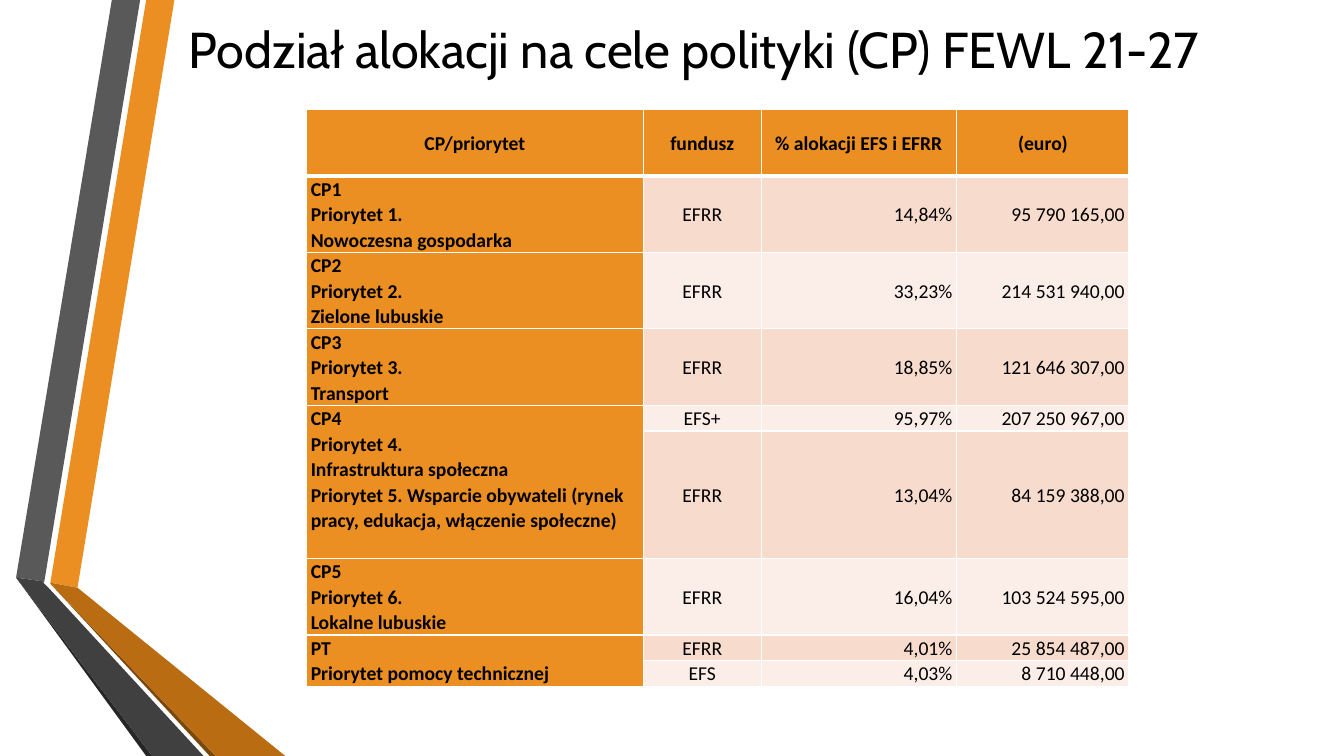
"""Builds the slide on the split of FEWL 21-27 funds by policy goal."""
from dataclasses import dataclass
from typing import Any

from lxml import etree
from pptx import Presentation
from pptx.dml import color
from pptx.enum import text as t
from pptx.oxml import ns
from pptx.util import Pt


@dataclass(frozen=True)
class Theme:
    """Colours, fonts and type sizes."""
    white: str = "FFFFFF"
    ink: str = "000000"
    main: str = "EB8F22"
    ochre: str = "B96C11"
    brown: str = "7B480B"
    grey: str = "595959"
    coal: str = "404040"
    dark: str = "262626"
    bands: tuple[str, str] = ("FBEEE8", "F7DBCD")
    head: str = "Cabin"
    body: str = "Calibri"
    big: float = 36
    small: float = 14


@dataclass(frozen=True)
class Strip:
    """A flat polygon of the side ribbon."""
    fill: str
    dots: tuple[tuple[float, float], ...]


@dataclass(frozen=True)
class Row:
    """A table row; an empty goal joins the cell above."""
    high: float
    goal: str
    fund: str
    share: str
    euro: str


LOOK = Theme()
LEFT, MID, RIGHT = t.PP_ALIGN.LEFT, t.PP_ALIGN.CENTER, t.PP_ALIGN.RIGHT
WIDE, HIGH = 960, 540
COLS = (240.5, 84.2, 139.7, 123.1)
ALIGN = (LEFT, MID, RIGHT, RIGHT)
LINE, TRIO = 18.2, 54.7

STRIPS = (
    Strip(LOOK.main, ((36, 416.2), (55.4, 419.8), (124.6, 0), (104.4, 0))),
    Strip(LOOK.grey, ((100.1, 0), (79.9, 0), (11.5, 412.6), (31.7, 415.4))),
    Strip(LOOK.dark, ((11.5, 412.6), (104.4, HIGH), (108.7, HIGH))),
    Strip(LOOK.brown, ((36, 416.9), (149.8, HIGH), (154.1, HIGH))),
    Strip(LOOK.ochre, ((36, 416.9), (154.1, HIGH), (203.8, HIGH),
                       (55.4, 419.8), (36, 416.2))),
    Strip(LOOK.coal, ((145.4, HIGH), (34.6, 419.8), (31, 416.2),
                      (31.7, 415.4), (11.5, 412.6), (108.7, HIGH))),
)

ROWS = (
    Row(47, "CP/priorytet", "fundusz", "% alokacji EFS i EFRR", "(euro)"),
    Row(TRIO, "CP1\nPriorytet 1.\nNowoczesna gospodarka",
        "EFRR", "14,84%", "95 790 165,00"),
    Row(TRIO, "CP2\nPriorytet 2.\nZielone lubuskie",
        "EFRR", "33,23%", "214 531 940,00"),
    Row(TRIO, "CP3\nPriorytet 3.\nTransport",
        "EFRR", "18,85%", "121 646 307,00"),
    Row(LINE, "CP4\nPriorytet 4.\nInfrastruktura społeczna\nPriorytet 5. "
        "Wsparcie obywateli (rynek pracy, edukacja, włączenie społeczne)",
        "EFS+", "95,97%", "207 250 967,00"),
    Row(5 * LINE, "", "EFRR", "13,04%", "84 159 388,00"),
    Row(TRIO, "CP5\nPriorytet 6.\nLokalne lubuskie",
        "EFRR", "16,04%", "103 524 595,00"),
    Row(LINE, "PT\nPriorytet pomocy technicznej",
        "EFRR", "4,01%", "25 854 487,00"),
    Row(LINE, "", "EFS", "4,03%", "8 710 448,00"),
)


def put(item: Any, vals: dict[str, Any]) -> None:
    """Set each named attribute of an item."""
    for name, val in vals.items():
        setattr(item, name, val)


def paint(fill: Any, tone: str) -> None:
    """Give a fill one solid colour."""
    fill.solid()
    fill.fore_color.rgb = color.RGBColor.from_string(tone)


def style(para: Any, side: Any, face: str, size: float, bold: bool) -> None:
    """Format a paragraph and its runs."""
    para.alignment = side
    for run in para.runs:
        put(run.font, {"name": face, "size": Pt(size), "bold": bold})
        run.font.color.rgb = color.RGBColor.from_string(LOOK.ink)


def draw(group: Any, strip: Strip) -> None:
    """Add one strip to the ribbon."""
    dots = [(Pt(x), Pt(y)) for x, y in strip.dots]
    pen = group.shapes.build_freeform(*dots[0])
    pen.add_line_segments(dots[1:], close=True)
    shape = pen.convert_to_shape()
    shape.shadow.inherit = False
    shape.line.fill.background()
    paint(shape.fill, strip.fill)


def edge(cell: Any, top: float, low: float) -> None:
    """Draw white borders round a cell."""
    props = cell._tc.get_or_add_tcPr()
    for tag, size in (("lnL", 1), ("lnR", 1), ("lnT", top), ("lnB", low)):
        line = etree.SubElement(props, ns.qn(f"a:{tag}"), w=str(Pt(size)))
        fill = etree.SubElement(line, ns.qn("a:solidFill"))
        etree.SubElement(fill, ns.qn("a:srgbClr"), val=LOOK.white)


def write(cell: Any, words: str, row: int, col: int) -> None:
    """Fill and format one table cell."""
    edge(cell, 3 if row == 1 else 1, 3 if row == 0 else 1)
    bold = row == 0 or col == 0
    paint(cell.fill, LOOK.main if bold else LOOK.bands[row % 2])
    tall = cell.is_merge_origin
    anchor = t.MSO_ANCHOR.TOP if tall else t.MSO_ANCHOR.MIDDLE
    put(cell, {"margin_left": Pt(3), "margin_right": Pt(3), "margin_top": 0,
               "margin_bottom": 0, "vertical_anchor": anchor})
    cell.text_frame.text = words
    for para in cell.text_frame.paragraphs:
        para.line_spacing = 1.07
        style(para, MID if row == 0 else ALIGN[col], LOOK.body, LOOK.small, bold)


def grid(slide: Any) -> None:
    """Add the table of funds."""
    high = sum(row.high for row in ROWS)
    frame = slide.shapes.add_table(len(ROWS), len(COLS), Pt(219), Pt(78.5),
                                   Pt(sum(COLS)), Pt(high))
    table = frame.table
    put(table, {"first_row": False, "horz_banding": False})
    for col, wide in zip(table.columns, COLS):
        col.width = Pt(wide)
    for i, row in enumerate(ROWS):
        table.rows[i].height = Pt(row.high)
        if not row.goal:
            table.cell(i - 1, 0).merge(table.cell(i, 0))
    for i, row in enumerate(ROWS):
        for j, words in enumerate((row.goal, row.fund, row.share, row.euro)):
            write(table.cell(i, j), words, i, j)


def head(slide: Any) -> None:
    """Place and format the title."""
    title = slide.shapes.title
    put(title, {"left": Pt(85), "top": Pt(6), "width": Pt(821),
                "height": Pt(57)})
    frame = title.text_frame
    frame.text = "Podział alokacji na cele polityki (CP) FEWL 21-27"
    put(frame, {"word_wrap": True, "auto_size": t.MSO_AUTO_SIZE.NONE,
                "vertical_anchor": t.MSO_ANCHOR.MIDDLE})
    style(frame.paragraphs[0], MID, LOOK.head, LOOK.big, False)


def main() -> None:
    """Build and save the slide."""
    deck = Presentation()
    put(deck, {"slide_width": Pt(WIDE), "slide_height": Pt(HIGH)})
    slide = deck.slides.add_slide(deck.slide_layouts[5])
    paint(slide.background.fill, LOOK.white)
    group = slide.shapes.add_group_shape()
    for strip in STRIPS:
        draw(group, strip)
    head(slide)
    grid(slide)
    deck.save("out.pptx")


if __name__ == "__main__":
    main()
